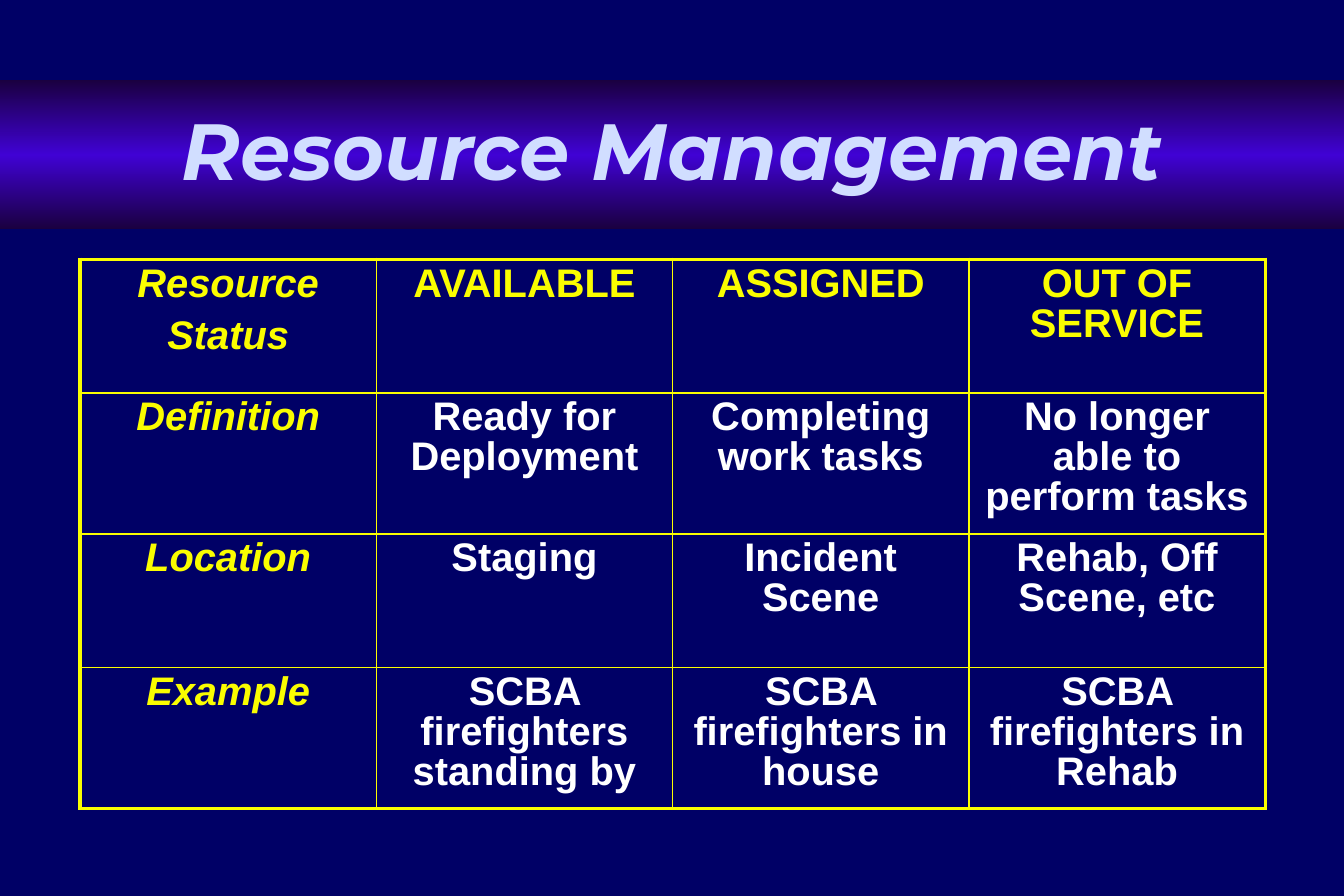
from copy import deepcopy
from lxml import etree
from pptx import Presentation, util as u
from pptx.dml.color import RGBColor
from pptx.enum import shapes, text
from pptx.oxml import ns

NAVY = RGBColor(0x00, 0x00, 0x66)
DARK = RGBColor(0x1A, 0x00, 0x40)
VIOLET = RGBColor(0x40, 0x02, 0xD4)
PALE = RGBColor(0xD1, 0xDE, 0xFF)
YELLOW = RGBColor(0xFA, 0xFD, 0x00)
WHITE = RGBColor(0xFF, 0xFF, 0xFF)

WIDE = 2.48
HIGH = [1.12, 1.18, 1.12, 1.18]
THIN, THICK = 1, 2.25
# A list holds the paragraphs of one cell
ROWS = [
    [["Resource", "Status"], ["AVAILABLE"], ["ASSIGNED"], ["OUT OF SERVICE"]],
    [["Definition"], ["Ready for Deployment"], ["Completing work tasks"],
     ["No longer able to perform tasks"]],
    [["Location"], ["Staging"], ["Incident Scene"], ["Rehab, Off Scene, etc"]],
    [["Example"], ["SCBA firefighters standing by"],
     ["SCBA firefighters in house"], ["SCBA firefighters in Rehab"]],
]


def write(para, words, face, size, color, slant):
    para.alignment = text.PP_ALIGN.CENTER
    para.line_spacing = 0.9
    run = para.add_run()
    run.text = words
    font = run.font
    font.name, font.size = face, u.Pt(size)
    font.bold, font.italic = True, slant
    font.color.rgb = color


def add_band(slide, words):
    band = slide.shapes.add_shape(
        shapes.MSO_SHAPE.RECTANGLE, 0, u.Inches(0.67),
        u.Inches(11.25), u.Inches(1.25))
    band.shadow.inherit = False
    band.line.fill.background()
    # Dark edges, bright middle
    fill = band.fill
    fill.gradient()
    fill.gradient_angle = 90
    stops = fill.gradient_stops
    for stop in stops:
        stop.color.rgb = DARK
    edge = fill._fill._gradFill.find(ns.qn("a:gsLst"))
    edge.insert(1, deepcopy(edge[0]))
    mid = fill.gradient_stops[1]
    mid.position = 0.5
    mid.color.rgb = VIOLET
    frame = band.text_frame
    frame.word_wrap = True
    frame.vertical_anchor = text.MSO_ANCHOR.MIDDLE
    write(frame.paragraphs[0], words, "Montserrat", 48, PALE, True)


def add_edge(cell, side, width):
    props = cell._tc.get_or_add_tcPr()
    line = etree.SubElement(props, ns.qn("a:ln" + side), w=str(u.Pt(width)))
    solid = etree.SubElement(line, ns.qn("a:solidFill"))
    etree.SubElement(solid, ns.qn("a:srgbClr"), val=str(YELLOW))


def fill_cell(cell, lines, row, col):
    last = len(ROWS) - 1
    outer = {"L": col == 0, "R": col == last, "T": row == 0, "B": row == last}
    for side, thick in outer.items():
        add_edge(cell, side, THICK if thick else THIN)
    cell.fill.background()
    color = YELLOW if row == 0 or col == 0 else WHITE
    frame = cell.text_frame
    for num, words in enumerate(lines):
        para = frame.add_paragraph() if num else frame.paragraphs[0]
        if num:
            para.space_before = u.Pt(7.2)
        write(para, words, "Arial", 24, color, col == 0)


def add_grid(slide):
    grid = slide.shapes.add_table(
        len(ROWS), len(ROWS[0]), u.Inches(0.67), u.Inches(2.17),
        u.Inches(WIDE * len(ROWS[0])), u.Inches(sum(HIGH))).table
    grid.first_row = grid.horz_banding = False
    for col in grid.columns:
        col.width = u.Inches(WIDE)
    for row, cells in enumerate(ROWS):
        grid.rows[row].height = u.Inches(HIGH[row])
        for col, lines in enumerate(cells):
            fill_cell(grid.cell(row, col), lines, row, col)


def main():
    deck = Presentation()
    deck.slide_width, deck.slide_height = u.Inches(11.25), u.Inches(7.5)
    slide = deck.slides.add_slide(deck.slide_layouts[6])
    slide.background.fill.solid()
    slide.background.fill.fore_color.rgb = NAVY
    # Title band
    add_band(slide, "Resource Management")
    # Status table
    add_grid(slide)
    deck.save("out.pptx")


if __name__ == "__main__":
    main()
